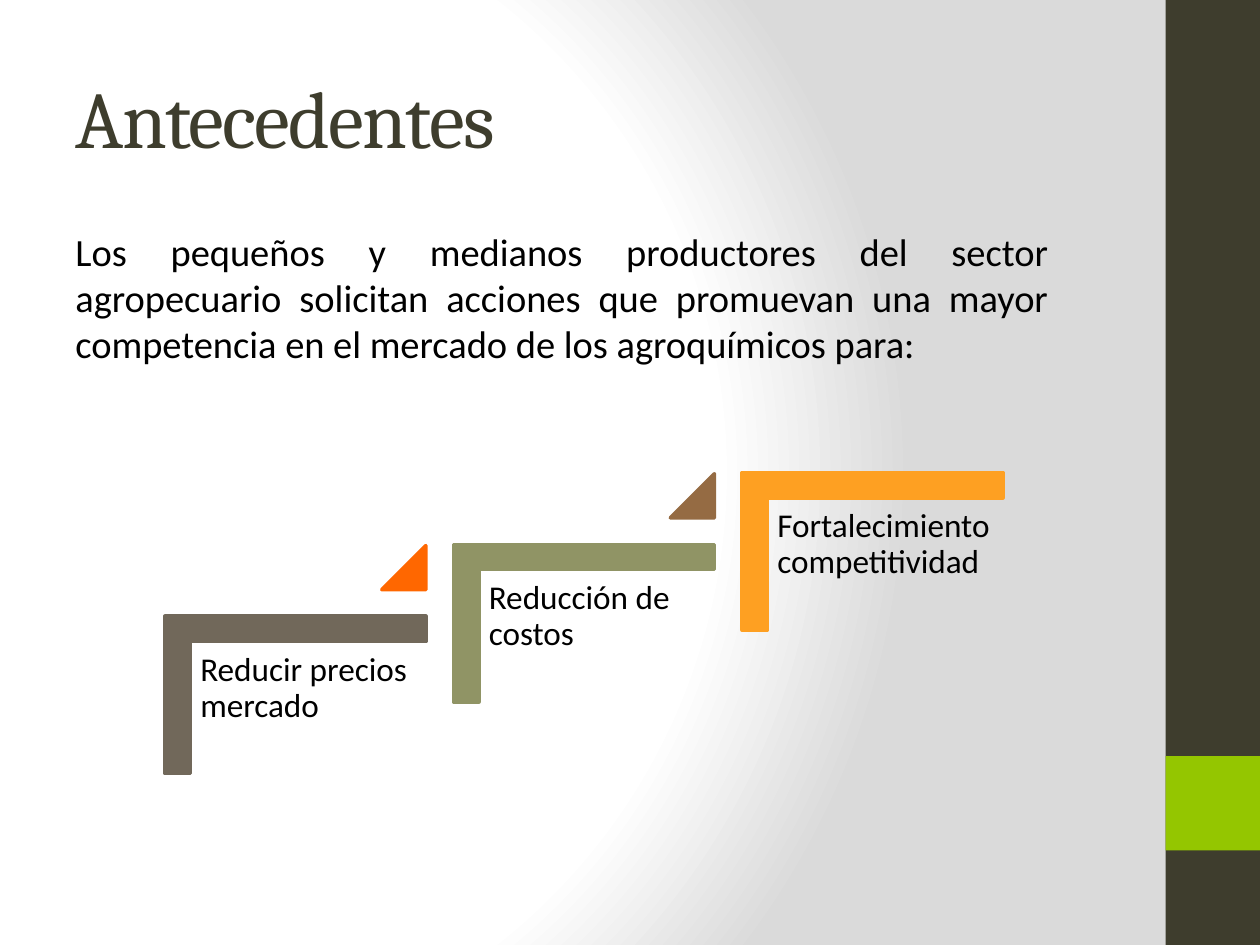
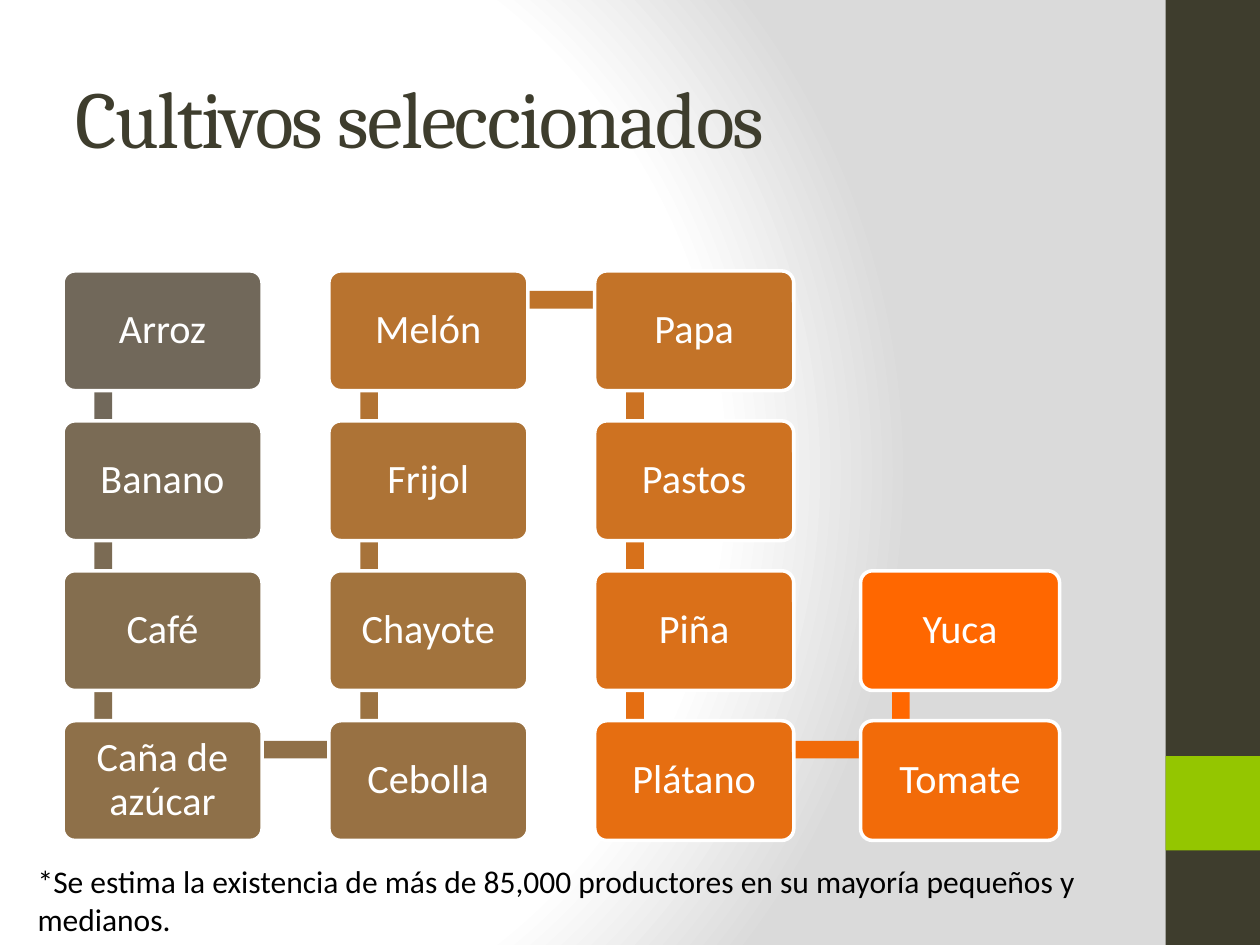
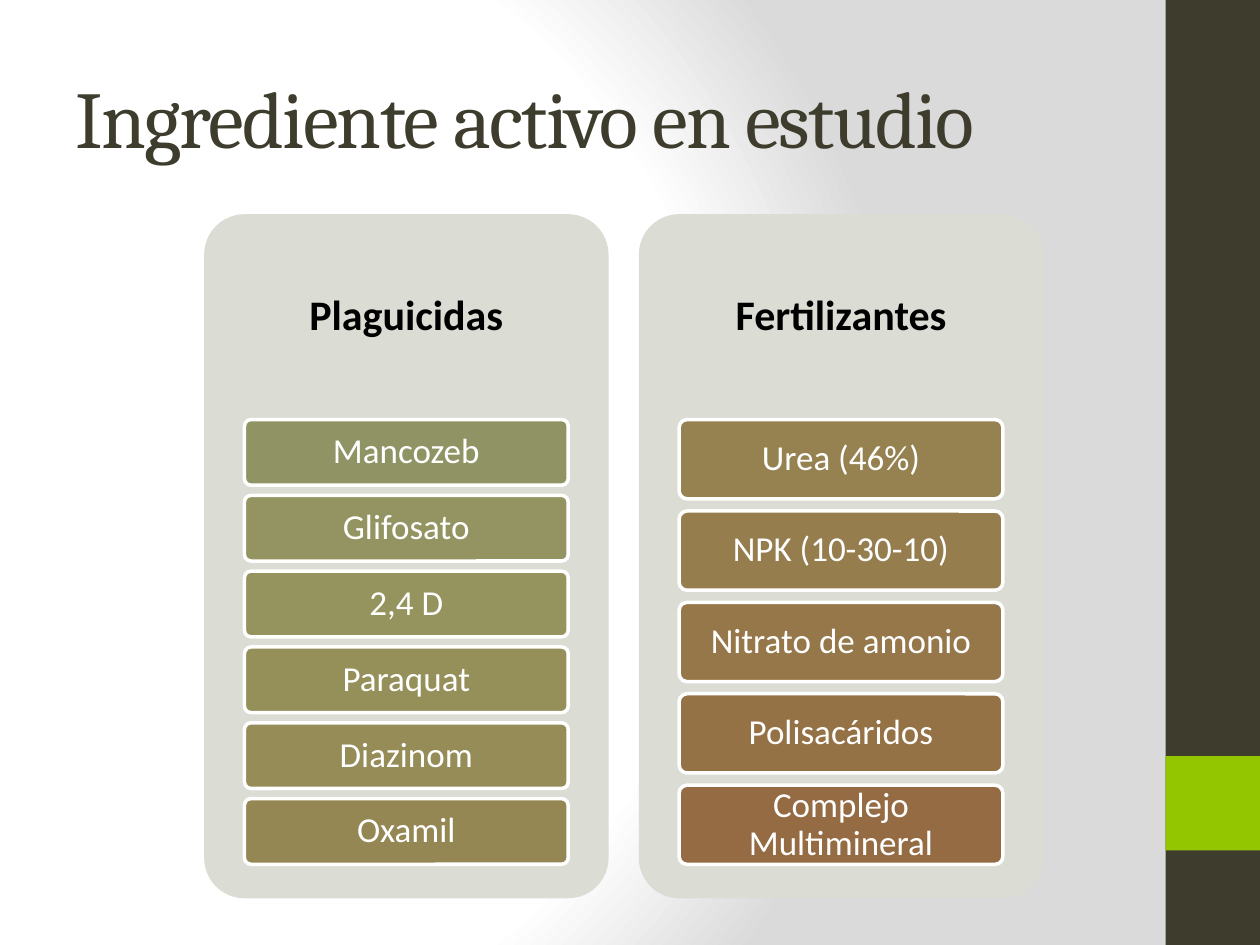
from pptx import Presentation
from pptx.dml.color import RGBColor
from pptx.enum.shapes import MSO_SHAPE as Shape
from pptx.enum.text import MSO_ANCHOR as Anchor, MSO_AUTO_SIZE as AutoSize, PP_ALIGN as Align
from pptx.oxml import parse_xml
from pptx.oxml.ns import nsdecls, qn
from pptx.util import Inches, Pt

OLIVE_DARK = RGBColor(0x3E, 0x3D, 0x2D)
LIME = RGBColor(0x94, 0xC6, 0x00)
PANEL = RGBColor(0xDB, 0xDC, 0xD3)
BLACK = RGBColor(0x00, 0x00, 0x00)
WHITE = RGBColor(0xFF, 0xFF, 0xFF)
TAUPE = RGBColor(0x71, 0x68, 0x5A)
SAGE = RGBColor(0x90, 0x94, 0x65)
AMBER = RGBColor(0xFE, 0xA0, 0x22)
ORANGE = RGBColor(0xFF, 0x67, 0x00)
BROWN = RGBColor(0x95, 0x6B, 0x43)

BODY_FONT = "Calibri"
TITLE_FONT = "Cambria"
TITLE_ONLY = 5

GRADIENT = f"""<a:gradFill {nsdecls("a")} rotWithShape="1">
  <a:gsLst>
    <a:gs pos="0"><a:srgbClr val="FFFFFF"/></a:gs>
    <a:gs pos="75000"><a:srgbClr val="FFFFFF"/></a:gs>
    <a:gs pos="100000"><a:srgbClr val="DADADA"/></a:gs>
  </a:gsLst>
  <a:path path="circle"><a:fillToRect l="20000" t="50000" r="100000" b="50000"/></a:path>
</a:gradFill>"""

# Step text, bracket colour, colour of the triangle that leads to the next step
STEPS = [
    ("Reducir precios mercado", TAUPE, ORANGE),
    ("Reducción de costos", SAGE, BROWN),
    ("Fortalecimiento competitividad", AMBER, None),
]

# Crop, card colour, colour of the bar that leads to the next card
CROPS = [
    ("Arroz", "71685A", "71685A"),
    ("Banano", "7A6B55", "7B6B54"),
    ("Café", "846E4F", "856E4E"),
    ("Caña de azúcar", "8E7049", "907048"),
    ("Cebolla", "987143", "9B7241"),
    ("Chayote", "A2733D", "A7733A"),
    ("Frijol", "AD7336", "B27333"),
    ("Melón", "B8732F", "BE732B"),
    ("Papa", "C37328", "CB7223"),
    ("Pastos", "CE7221", "D7711B"),
    ("Piña", "DA7019", "E46E12"),
    ("Plátano", "E66E11", "F16B09"),
    ("Tomate", "F26B09", "FF6700"),
    ("Yuca", "FF6700", None),
]

PESTICIDES = [
    ("Mancozeb", "909465"),
    ("Glifosato", "939461"),
    ("2,4 D", "95935E"),
    ("Paraquat", "958F5A"),
    ("Diazinom", "958C57"),
    ("Oxamil", "958753"),
]
FERTILIZERS = [
    ("Urea (46%)", "958250"),
    ("NPK (10-30-10)", "957D4D"),
    ("Nitrato de amonio", "957749"),
    ("Polisacáridos", "957146"),
    ("Complejo Multimineral", "956B43"),
]


def place(shape, left, top, width, height):
    shape.left, shape.top = Inches(left), Inches(top)
    shape.width, shape.height = Inches(width), Inches(height)


def write_text(shape, text, size, color=BLACK, font=BODY_FONT, bold=False, align=Align.LEFT,
               anchor=Anchor.TOP, margins=(0.1, 0.05), line_spacing=None, tracking=None):
    """Margins are (sides, top and bottom) in inches; tracking is in points."""
    frame = shape.text_frame
    frame.word_wrap = True
    frame.auto_size = AutoSize.NONE
    frame.vertical_anchor = anchor
    frame.margin_left = frame.margin_right = Inches(margins[0])
    frame.margin_top = frame.margin_bottom = Inches(margins[1])
    paragraph = frame.paragraphs[0]
    paragraph.alignment = align
    if line_spacing:
        paragraph.line_spacing = line_spacing
    run = paragraph.add_run()
    run.text = text
    run.font.name = font
    run.font.size = Pt(size)
    run.font.bold = bold
    run.font.color.rgb = color
    if tracking:
        run._r.get_or_add_rPr().set("spc", str(tracking * 100))


def add_text(slide, box, text, size, **text_format):
    textbox = slide.shapes.add_textbox(*map(Inches, box))
    write_text(textbox, text, size, **text_format)


def add_block(slide, kind, box, fill, line=None, adjustments=()):
    shape = slide.shapes.add_shape(kind, *map(Inches, box))
    shape.shadow.inherit = False
    shape.fill.solid()
    shape.fill.fore_color.rgb = fill
    if line is None:
        shape.line.fill.background()
    else:
        shape.line.color.rgb = line
        shape.line.width = Pt(2)
    for index, value in enumerate(adjustments):
        shape.adjustments[index] = value
    return shape


def add_card(slide, box, text, size, fill, margins):
    card = add_block(slide, Shape.ROUNDED_RECTANGLE, box, fill, WHITE, [0.1])
    write_text(card, text, size, color=WHITE, align=Align.CENTER, anchor=Anchor.MIDDLE,
               margins=margins, line_spacing=0.9)


def set_background(master):
    master.background.fill.gradient()
    default_gradient = master.element.find(".//" + qn("a:gradFill"))
    default_gradient.getparent().replace(default_gradient, parse_xml(GRADIENT))


def add_titled_slide(presentation, title):
    slide = presentation.slides.add_slide(presentation.slide_layouts[TITLE_ONLY])
    add_block(slide, Shape.RECTANGLE, (9.25, 0, 0.75, 7.5), OLIVE_DARK)
    add_block(slide, Shape.RECTANGLE, (9.25, 6, 0.75, 0.75), LIME)
    place(slide.shapes.title, 0.5, 0.3, 8.33, 1.25)
    write_text(slide.shapes.title, title, 46, color=OLIVE_DARK, font=TITLE_FONT,
               anchor=Anchor.MIDDLE, tracking=-1)
    return slide


def add_step(slide, left, top, text, color, triangle_color):
    """Draw a bracket with its text; left and top are those of the text."""
    bracket = add_block(slide, Shape.CORNER, (left + 0.21, top - 0.62, 1.25, 2.07),
                        color, color, [0.161, 0.161])
    bracket.rotation = 90
    add_text(slide, (left, top, 1.87, 1.64), text, 19, margins=(0.08, 0.08), line_spacing=0.9)
    if triangle_color:
        add_block(slide, Shape.ISOSCELES_TRIANGLE, (left + 1.52, top - 0.77, 0.35, 0.35),
                  triangle_color, triangle_color, [1])


def add_crop_chain(slide):
    """Lay the cards out in columns that run down and up in turn."""
    rows, column_pitch, row_pitch, thickness = 4, 2.11, 1.19, 0.14

    def corner(index):
        column, step = divmod(index, rows)
        row = rows - 1 - step if column % 2 else step
        return 0.5 + column * column_pitch, 2.15 + row * row_pitch

    for index, (crop, card_color, bar_color) in enumerate(CROPS):
        left, top = corner(index)
        if bar_color:
            next_left, next_top = corner(index + 1)
            if next_left > left:
                bar = (left + 0.33, top + 0.16, column_pitch, thickness)
            else:
                bar = (left + 0.25, min(top, next_top) + 0.24, thickness, row_pitch)
            add_block(slide, Shape.RECTANGLE, bar, RGBColor.from_string(bar_color))
        add_card(slide, (left, top, 1.58, 0.95), crop, 23,
                 RGBColor.from_string(card_color), (0.13, 0.13))


def add_ingredient_panel(slide, left, heading, ingredients):
    """Draw a panel whose cards share one height, with gaps in proportion to it."""
    top, width, first_top, stack_height, gap_ratio = 1.7, 3.21, 3.33, 3.53, 0.154
    add_block(slide, Shape.ROUNDED_RECTANGLE, (left, top, width, 5.43), PANEL,
              adjustments=[0.1])
    add_text(slide, (left, top, width, first_top - top), heading, 24, bold=True,
             align=Align.CENTER, anchor=Anchor.MIDDLE, margins=(0.1, 0.1), line_spacing=0.9)
    count = len(ingredients)
    card_height = stack_height / (count + (count - 1) * gap_ratio)
    for index, (ingredient, color) in enumerate(ingredients):
        card_top = first_top + index * card_height * (1 + gap_ratio)
        add_card(slide, (left + 0.32, card_top, 2.57, card_height), ingredient, 20,
                 RGBColor.from_string(color), (0.07, 0.06))


def build_background_slide(presentation):
    """Build the slide on the reasons for the study."""
    slide = add_titled_slide(presentation, "Antecedentes")
    add_text(slide, (0.5, 1.76, 7.92, 1.91),
             "Los pequeños y medianos productores del sector agropecuario solicitan acciones "
             "que promuevan una mayor competencia en el mercado de los agroquímicos para:",
             22, align=Align.JUSTIFY)
    for index, step in enumerate(STEPS):
        add_step(slide, 1.51 + index * 2.29, 5.1 - index * 0.57, *step)


def build_crops_slide(presentation):
    slide = add_titled_slide(presentation, "Cultivos seleccionados")
    add_crop_chain(slide)
    add_text(slide, (0.2, 6.79, 8.82, 0.71),
             "*Se estima la existencia de más de 85,000 productores en su mayoría "
             "pequeños y medianos.", 18)


def build_ingredients_slide(presentation):
    slide = add_titled_slide(presentation, "Ingrediente activo en estudio")
    add_ingredient_panel(slide, 1.62, "Plaguicidas", PESTICIDES)
    add_ingredient_panel(slide, 5.07, "Fertilizantes", FERTILIZERS)


def main():
    presentation = Presentation()
    presentation.slide_width, presentation.slide_height = Inches(10), Inches(7.5)
    set_background(presentation.slide_master)
    build_background_slide(presentation)
    build_crops_slide(presentation)
    build_ingredients_slide(presentation)
    presentation.save("out.pptx")


if __name__ == "__main__":
    main()
